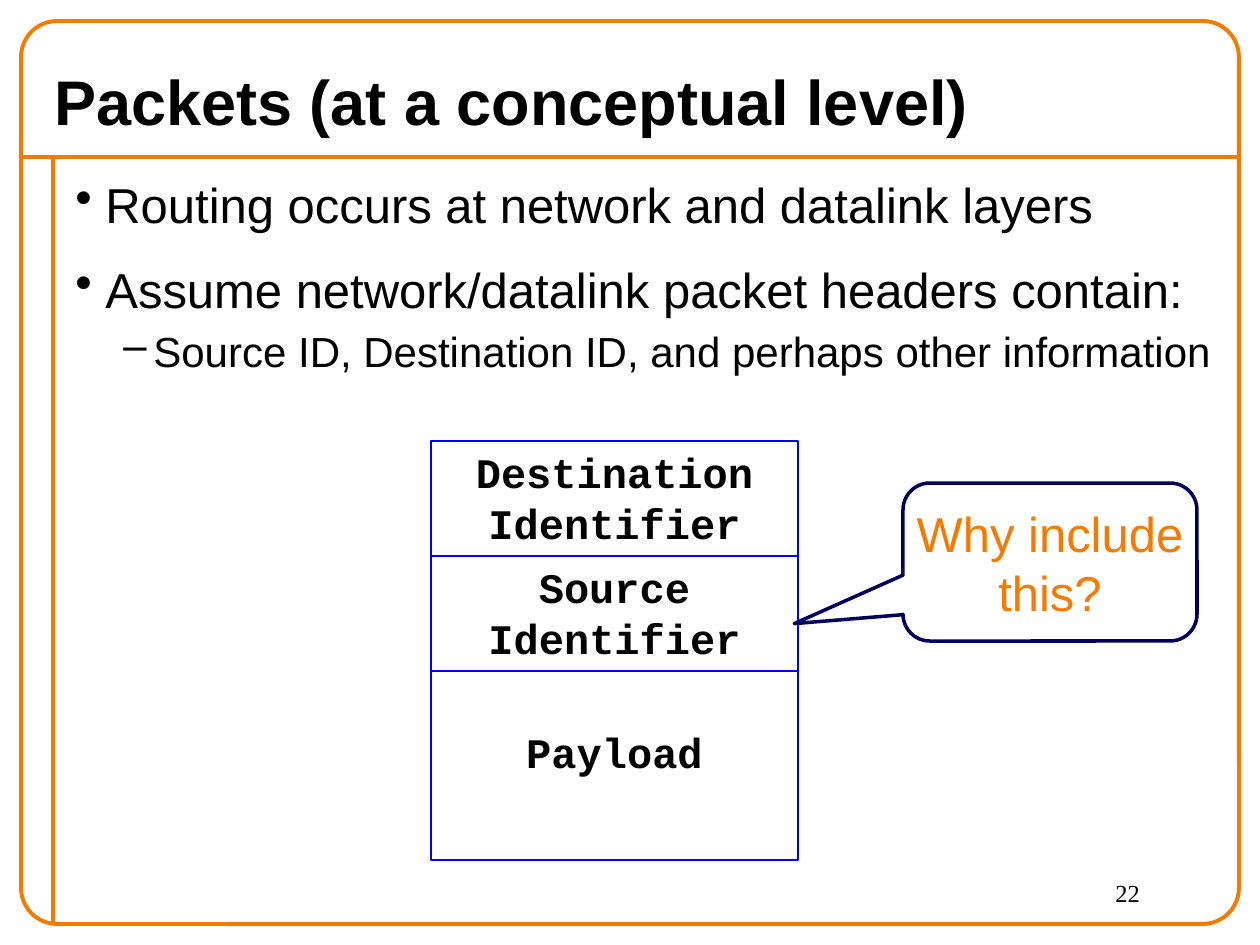
from lxml import etree
from pptx import Presentation
from pptx.dml.color import RGBColor
from pptx.enum.shapes import MSO_CONNECTOR, MSO_SHAPE
from pptx.enum.text import MSO_ANCHOR, PP_ALIGN
from pptx.oxml.ns import qn
from pptx.util import Emu, Pt

STRAIGHT = MSO_CONNECTOR.STRAIGHT
RECTANGLE = MSO_SHAPE.RECTANGLE
ROUNDED = MSO_SHAPE.ROUNDED_RECTANGLE
CALLOUT = MSO_SHAPE.ROUNDED_RECTANGULAR_CALLOUT
TOP, MIDDLE = MSO_ANCHOR.TOP, MSO_ANCHOR.MIDDLE
LEFT, CENTER = PP_ALIGN.LEFT, PP_ALIGN.CENTER

EMU_PER_PX = 914400 / 126


def px(length):
    return Emu(round(length * EMU_PER_PX))


def color(hex_string):
    return RGBColor.from_string(hex_string)


class Slide:
    ORANGE = "F47A00"
    BLUE = "0000FF"
    NAVY = "00005C"
    BLACK = "000000"
    WHITE = "FFFFFF"
    SANS = "Arial"
    MONO = "Courier New"
    SERIF = "Times New Roman"

    def __init__(self, page):
        self.page = page

    def line(self, x1, y1, x2, y2):
        line = self.page.shapes.add_connector(STRAIGHT, px(x1), px(y1), px(x2), px(y2))
        line.line.color.rgb = color(self.ORANGE)
        line.line.width = Pt(2.25)
        etree.SubElement(line._element.spPr, qn("a:effectLst"))

    def shape(self, kind, bounds, outline, width, fill=None, adjustments=()):
        shape = self.page.shapes.add_shape(kind, *map(px, bounds))
        shape.shadow.inherit = False
        if fill:
            shape.fill.solid()
            shape.fill.fore_color.rgb = color(fill)
        else:
            shape.fill.background()
        shape.line.color.rgb = color(outline)
        shape.line.width = Pt(width)
        for index, value in enumerate(adjustments):
            shape.adjustments[index] = value
        return shape

    def box(self, bounds):
        return self.page.shapes.add_textbox(*map(px, bounds))

    def text(self, shape, lines, size, font, ink=BLACK, bold=False,
             align=LEFT, anchor=TOP, wrap=True):
        frame = shape.text_frame
        frame.word_wrap = wrap
        frame.vertical_anchor = anchor
        frame.text = "\n".join(lines)
        for para in frame.paragraphs:
            para.alignment = align
            para.font.size = Pt(size)
            para.font.name = font
            para.font.bold = bold
            para.font.color.rgb = color(ink)
        return frame

    def bullet(self, para, mark, size, margin, space_before):
        para.font.size = Pt(size)
        para.space_before = Pt(space_before)
        properties = para._p.get_or_add_pPr()
        properties.set("marL", str(px(margin)))
        properties.set("indent", str(px(-30)))
        character = etree.Element(qn("a:buChar"), char=mark)
        properties.find(qn("a:defRPr")).addprevious(character)


def main():
    deck = Presentation()
    deck.slide_width, deck.slide_height = px(1260), px(945)
    slide = Slide(deck.slides.add_slide(deck.slide_layouts[6]))

    slide.line(21, 157, 1239, 157)
    slide.line(53, 157, 53, 924)
    slide.shape(ROUNDED, (21, 21, 1218, 903), slide.ORANGE, 2.25, adjustments=[0.04])

    slide.text(slide.box((42, 53, 1111, 94)), ["Packets (at a conceptual level)"],
               36, slide.SANS, bold=True, anchor=MIDDLE)

    bullets = [
        ("Routing occurs at network and datalink layers", "•", 28, 30, 15),
        ("Assume network/datalink packet headers contain:", "•", 28, 30, 15),
        ("Source ID, Destination ID, and perhaps other information", "–", 24, 78, 4),
    ]
    body = slide.text(slide.box((63, 168, 1166, 756)),
                      [line for line, *_ in bullets], 28, slide.SANS)
    for para, (_, *style) in zip(body.paragraphs, bullets):
        slide.bullet(para, *style)

    slide.text(slide.box((1103, 872, 126, 53)), ["22"], 14, slide.SERIF)

    packet_fields = [
        (["Destination", "Identifier"], 115, 6),
        (["Source", "Identifier"], 115, 6),
        (["Payload"], 189, 55),
    ]
    top = 441
    for lines, height, inset in packet_fields:
        field = slide.shape(RECTANGLE, (431, top, 367, height), slide.BLUE, 0.75)
        frame = slide.text(field, lines, 24, slide.MONO, bold=True, align=CENTER)
        frame.margin_top = px(inset)
        top += height

    callout = slide.shape(CALLOUT, (903, 483, 294, 158), slide.NAVY, 2,
                          slide.WHITE, [-0.87, 0.39, 0.17])
    slide.text(callout, ["Why include", "this?"], 28, slide.SANS, slide.ORANGE,
               align=CENTER, anchor=MIDDLE, wrap=False)

    deck.save("out.pptx")


if __name__ == "__main__":
    main()
